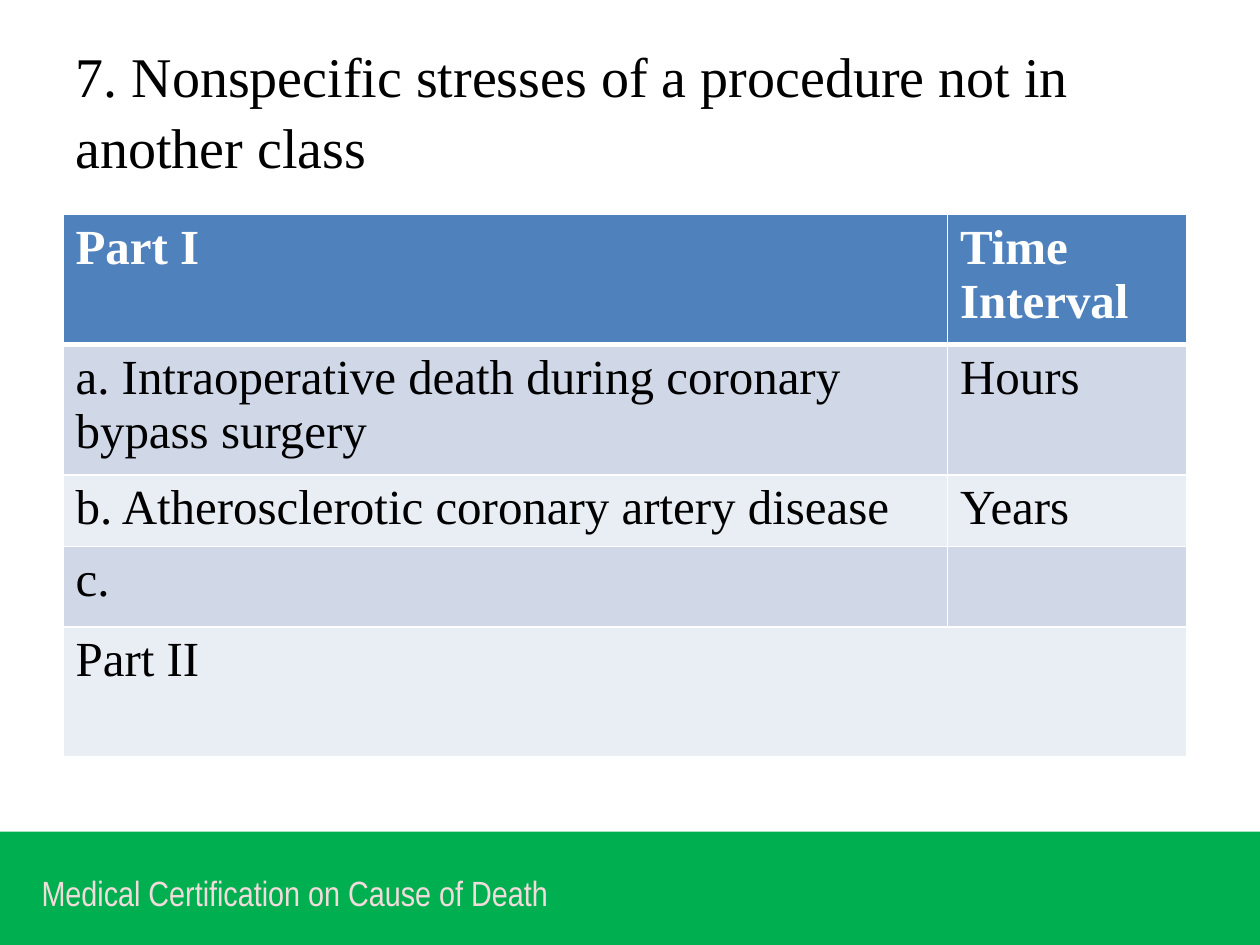
from lxml import etree
from pptx import Presentation
from pptx.dml.color import RGBColor
from pptx.enum import shapes, text
from pptx.oxml.ns import qn
from pptx.util import Inches, Pt

WHITE = RGBColor(0xFF, 0xFF, 0xFF)
BLACK = RGBColor(0x00, 0x00, 0x00)
GREEN = RGBColor(0x00, 0xB0, 0x50)
PINK = RGBColor(0xF2, 0xDC, 0xDB)
BLUE = RGBColor(0x4F, 0x81, 0xBD)
BAND_DARK = RGBColor(0xD0, 0xD8, 0xE8)
BAND_LIGHT = RGBColor(0xE9, 0xED, 0xF4)
SERIF = "Times New Roman"

COLUMNS = [7.02, 1.9]
ROWS = [
    (1.03, ["Part I", "Time Interval"]),
    (0.88, ["a. Intraoperative death during coronary bypass surgery", "Hours"]),
    (0.48, ["b. Atherosclerotic coronary artery disease", "Years"]),
    (0.64, ["c.", ""]),
    (1.03, ["Part II", ""]),
]


def style_text(tf, font, size, color, bold=False):
    """Format every paragraph and run of a text frame."""
    for p in tf.paragraphs:
        p.alignment = text.PP_ALIGN.LEFT
        for item in [p, *p.runs]:
            item.font.name = font
            item.font.size = Pt(size)
            item.font.bold = bold
            item.font.color.rgb = color


def set_borders(cell, top, bottom):
    """Give a cell white borders, with top and bottom widths in points."""
    tc_pr = cell._tc.get_or_add_tcPr()
    widths = {"a:lnL": 1, "a:lnR": 1, "a:lnT": top, "a:lnB": bottom}
    for i, (tag, width) in enumerate(widths.items()):
        ln = etree.Element(qn(tag), w=str(Pt(width)))
        fill = etree.SubElement(ln, qn("a:solidFill"))
        etree.SubElement(fill, qn("a:srgbClr"), val=str(WHITE))
        tc_pr.insert(i, ln)


def add_footer(s):
    """Add the green band and its caption."""
    sp = s.shapes.add_shape(shapes.MSO_SHAPE.RECTANGLE, Inches(0), Inches(6.6),
                            Inches(10), Inches(0.9))
    sp.shadow.inherit = False
    sp.fill.solid()
    sp.fill.fore_color.rgb = GREEN
    sp.line.fill.background()
    tf = s.shapes.add_textbox(Inches(0.33), Inches(6.85),
                              Inches(5.17), Inches(0.47)).text_frame
    tf.margin_left = tf.margin_right = tf.margin_top = tf.margin_bottom = 0
    tf.word_wrap = True
    tf.vertical_anchor = text.MSO_ANCHOR.MIDDLE
    tf.text = "Medical Certification on Cause of Death"
    style_text(tf, "Arial Narrow", 20, PINK)


def set_title(s, title):
    """Fill and place the title placeholder."""
    sp = s.shapes.title
    sp.left, sp.top = Inches(0.5), Inches(0.3)
    sp.width, sp.height = Inches(9), Inches(1.12)
    tf = sp.text_frame
    tf.word_wrap = True
    tf.vertical_anchor = text.MSO_ANCHOR.MIDDLE
    tf.text = title
    tf.paragraphs[0].line_spacing = 1.06
    style_text(tf, SERIF, 32, BLACK)


def add_certificate_table(s):
    """Add the cause-of-death table."""
    frame = s.shapes.add_table(len(ROWS), len(COLUMNS), Inches(0.5), Inches(1.7),
                               Inches(sum(COLUMNS)), Inches(4.3))
    table = frame.table
    for column, width in zip(table.columns, COLUMNS):
        column.width = Inches(width)
    for i, (height, labels) in enumerate(ROWS):
        table.rows[i].height = Inches(height)
        header = i == 0
        band = BAND_DARK if i % 2 else BAND_LIGHT
        for cell, label in zip(table.rows[i].cells, labels):
            cell.text = label
            style_text(cell.text_frame, SERIF, 28, WHITE if header else BLACK, header)
            cell.fill.solid()
            cell.fill.fore_color.rgb = BLUE if header else band
            set_borders(cell, 3 if i == 1 else 1, 3 if header else 1)
    last = len(ROWS) - 1
    table.cell(last, 0).merge(table.cell(last, 1))
    frame.height = Inches(4.3)


def main():
    """Build and save the slide."""
    prs = Presentation()
    prs.slide_width, prs.slide_height = Inches(10), Inches(7.5)
    s = prs.slides.add_slide(prs.slide_layouts[5])
    s.background.fill.solid()
    s.background.fill.fore_color.rgb = WHITE
    add_footer(s)
    set_title(s, "7. Nonspecific stresses of a procedure not in another class")
    add_certificate_table(s)
    prs.save("out.pptx")


if __name__ == "__main__":
    main()
